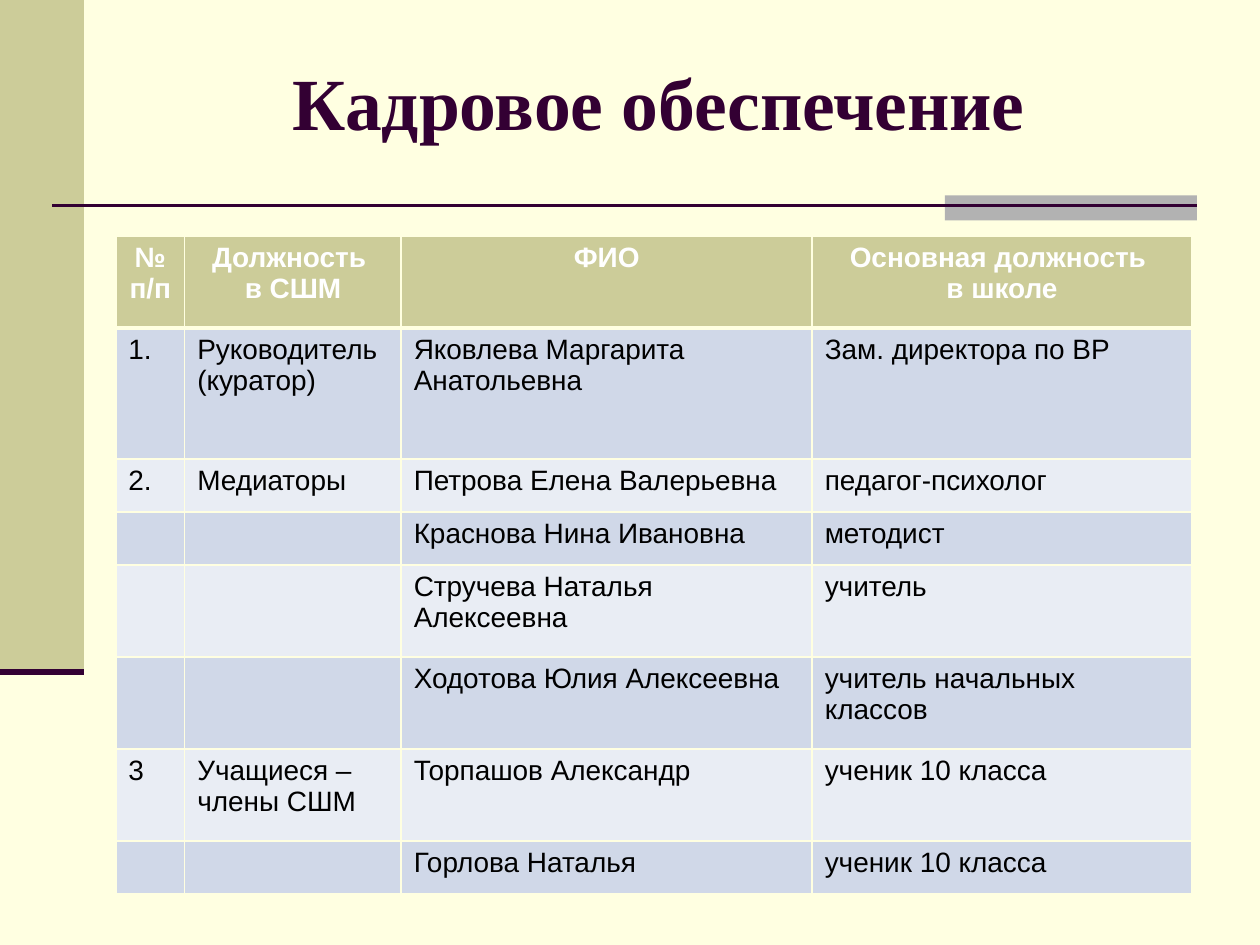
from lxml import etree
from pptx import Presentation
from pptx.dml.color import RGBColor
from pptx.enum import shapes, text
from pptx.oxml.ns import qn
from pptx.util import Pt

CREAM, OLIVE, PLUM, GRAY = "FFFFE1", "CCCC99", "330033", "B2B2B2"
BANDS = ("D0D8E8", "E9EDF4")

TITLE = "Кадровое обеспечение"
HEADER = ("№ п/п", "Должность \nв СШМ", "ФИО", "Основная должность \nв школе")
STAFF = [
    ("1.", "Руководитель\n(куратор)", "Яковлева Маргарита Анатольевна", "Зам. директора по ВР"),
    ("2.", "Медиаторы", "Петрова Елена Валерьевна", "педагог-психолог"),
    ("", "", "Краснова Нина Ивановна", "методист"),
    ("", "", "Стручева Наталья Алексеевна", "учитель"),
    ("", "", "Ходотова Юлия Алексеевна", "учитель начальных классов"),
    ("3", "Учащиеся – члены СШМ", "Торпашов Александр", "ученик 10 класса"),
    ("", "", "Горлова Наталья", "ученик 10 класса"),
]
COLUMN_WIDTHS = (39.4, 123.7, 234.9, 216.8)
SHORT, TALL, TALLEST = 30.3, 52.6, 74.9
ROW_HEIGHTS = (TALL, TALLEST, SHORT, SHORT, TALL, TALL, TALL, SHORT)


def color(value):
    return RGBColor.from_string(value)


def box(values):
    return [Pt(value) for value in values]


def write(frame, content, size, ink, font="Arial", bold=False, align=text.PP_ALIGN.LEFT):
    for index, line in enumerate(content.split("\n")):
        paragraph = frame.paragraphs[0] if index == 0 else frame.add_paragraph()
        paragraph.alignment = align
        paragraph.font.size = Pt(size)
        if line:
            run = paragraph.add_run()
            run.text = line
            run.font.name, run.font.size, run.font.bold = font, Pt(size), bold
            run.font.color.rgb = color(ink)


def add_bar(slide, bounds, fill):
    shape = slide.shapes.add_shape(shapes.MSO_SHAPE.RECTANGLE, *box(bounds))
    shape.shadow.inherit = False
    shape.fill.solid()
    shape.fill.fore_color.rgb = color(fill)
    shape.line.fill.background()


def add_rule(slide, ends, width):
    rule = slide.shapes.add_connector(shapes.MSO_CONNECTOR.STRAIGHT, *box(ends))
    rule.line.color.rgb = color(PLUM)
    rule.line.width = Pt(width)
    etree.SubElement(rule._element.spPr, qn("a:effectLst"))


def set_border(cell, side, width):
    properties = cell._tc.get_or_add_tcPr()
    line = etree.SubElement(properties, qn(f"a:ln{side}"), w=str(Pt(width)))
    fill = etree.SubElement(line, qn("a:solidFill"))
    etree.SubElement(fill, qn("a:srgbClr"), val=CREAM)


def add_staff_table(slide):
    rows = [HEADER, *STAFF]
    bounds = (66.2, 134.9, sum(COLUMN_WIDTHS), sum(ROW_HEIGHTS))
    table = slide.shapes.add_table(len(rows), len(HEADER), *box(bounds)).table
    for column, width in zip(table.columns, COLUMN_WIDTHS):
        column.width = Pt(width)
    for index, (row, height, values) in enumerate(zip(table.rows, ROW_HEIGHTS, rows)):
        row.height = Pt(height)
        header = index == 0
        for cell, value in zip(row.cells, values):
            # A thick line separates the header from the body
            for side in "LRTB":
                thick = (index, side) in ((0, "B"), (1, "T"))
                set_border(cell, side, 3 if thick else 1)
            cell.fill.solid()
            cell.fill.fore_color.rgb = color(OLIVE if header else BANDS[(index - 1) % 2])
            write(cell.text_frame, value, 16, "FFFFFF" if header else "000000", bold=header,
                  align=text.PP_ALIGN.CENTER if header else text.PP_ALIGN.LEFT)


def main():
    presentation = Presentation()
    presentation.slide_width, presentation.slide_height = Pt(720), Pt(540)
    slide = presentation.slides.add_slide(presentation.slide_layouts[6])
    slide.background.fill.solid()
    slide.background.fill.fore_color.rgb = color(CREAM)

    # Side and title decoration
    add_bar(slide, (0, 0, 48, 384), OLIVE)
    add_bar(slide, (540, 111.6, 144, 14.4), GRAY)
    add_rule(slide, (30, 117.6, 684, 117.6), 1.5)
    add_rule(slide, (0, 384, 48, 384), 3.5)

    # Title
    frame = slide.shapes.add_textbox(*box((70.6, 20.2, 612, 74.9))).text_frame
    frame.word_wrap = True
    frame.vertical_anchor = text.MSO_ANCHOR.MIDDLE
    write(frame, TITLE, 42, PLUM, font="Times New Roman", bold=True, align=text.PP_ALIGN.CENTER)

    add_staff_table(slide)
    presentation.save("out.pptx")


if __name__ == "__main__":
    main()
